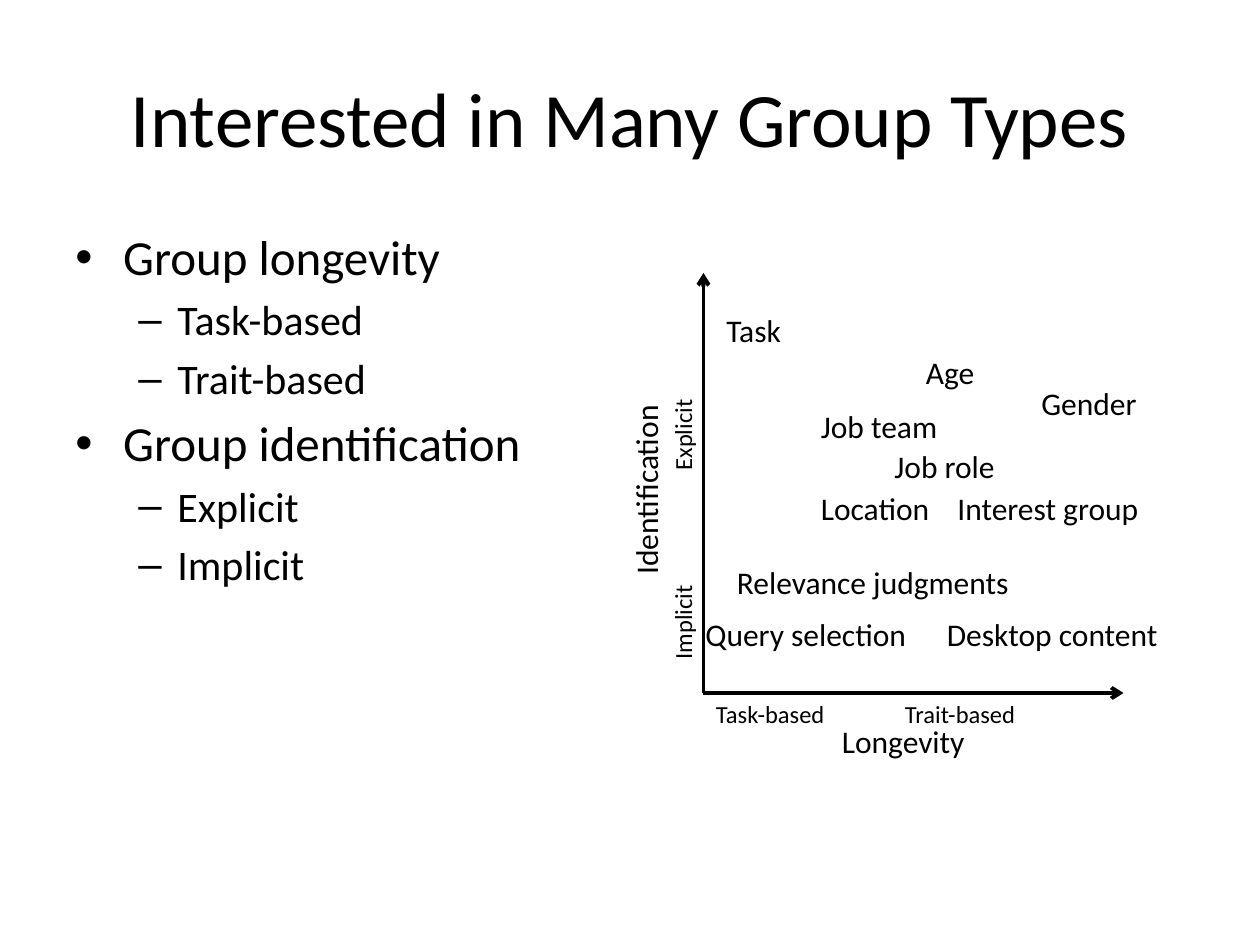
from lxml import etree
from pptx import Presentation
from pptx.dml.color import RGBColor
from pptx.enum import shapes, text
from pptx.oxml import ns
from pptx.util import Inches, Pt

COLUMNS, ROWS = 120, 90


def color(value):
    return RGBColor.from_string(value)


def add_text(para, words, size=18, font="Calibri", ink="000000", align=None):
    span = para.add_run()
    span.text = words
    span.font.size = Pt(size)
    span.font.name = font
    span.font.color.rgb = color(ink)
    para.alignment = align


class SlideBuilder:
    ink = "000000"
    line_width = 2.25
    # For each outline level: size, bullet, left margin and hanging indent in inches
    levels = [(28, "•", 0.38, 0.38), (24, "–", 0.81, 0.31)]

    def __init__(self, deck):
        self.column = deck.slide_width / COLUMNS
        self.row = deck.slide_height / ROWS
        self.page = deck.slides.add_slide(deck.slide_layouts[5])

    def place(self, left, top, width, height):
        return (round(left * self.column), round(top * self.row),
                round(width * self.column), round(height * self.row))

    def title(self, words, *area):
        box = self.page.shapes.title
        box.left, box.top, box.width, box.height = self.place(*area)
        frame = box.text_frame
        frame.vertical_anchor = text.MSO_ANCHOR.MIDDLE
        add_text(frame.paragraphs[0], words, size=44, ink=self.ink,
                 align=text.PP_ALIGN.CENTER)

    def label(self, words, left, top, width, size=18, rotation=0):
        height = 4.8 if size == 18 else 4
        box = self.page.shapes.add_textbox(*self.place(left, top, width, height))
        box.rotation = rotation
        frame = box.text_frame
        frame.word_wrap = True
        frame.auto_size = text.MSO_AUTO_SIZE.SHAPE_TO_FIT_TEXT
        add_text(frame.paragraphs[0], words, size=size, ink=self.ink)

    def outline(self, items, *area):
        frame = self.page.shapes.add_textbox(*self.place(*area)).text_frame
        frame.word_wrap = True
        for index, (level, words) in enumerate(items):
            para = frame.add_paragraph() if index else frame.paragraphs[0]
            size, bullet, margin, hanging = self.levels[level]
            para.level = level
            para.space_before = Pt(0.2 * size)
            add_text(para, words, size=size, ink=self.ink)
            properties = para._p.get_or_add_pPr()
            properties.set("marL", str(Inches(margin)))
            properties.set("indent", str(-Inches(hanging)))
            etree.SubElement(properties, ns.qn("a:buFont"), typeface="Arial")
            etree.SubElement(properties, ns.qn("a:buChar"), char=bullet)

    def arrow(self, left, top, end_left, end_top):
        line = self.page.shapes.add_connector(
            shapes.MSO_CONNECTOR.STRAIGHT, *self.place(left, top, end_left, end_top))
        line.line.color.rgb = color(self.ink)
        line.line.width = Pt(self.line_width)
        etree.SubElement(line.line._get_or_add_ln(), ns.qn("a:tailEnd"), type="arrow")
        etree.SubElement(line._element.spPr, ns.qn("a:effectLst"))


def main():
    deck = Presentation()
    deck.slide_width, deck.slide_height = Inches(10), Inches(7.5)
    slide = SlideBuilder(deck)

    # Title and outline
    slide.title("Interested in Many Group Types", 6, 3.6, 108, 15)
    slide.outline([
        (0, "Group longevity"), (1, "Task-based"), (1, "Trait-based"),
        (0, "Group identification"), (1, "Explicit"), (1, "Implicit"),
    ], 6, 21, 53, 59.4)

    # Axes with their names and ends
    origin, axis_length = (67, 66), 40
    slide.arrow(*origin, origin[0] + axis_length, origin[1])
    slide.label("Task-based\t\tTrait-based", 67, 66, 38, size=14)
    slide.label("Longevity", 79, 68.2, 19)
    slide.arrow(*origin, origin[0], origin[1] - axis_length)
    slide.label("Identification", 52, 44, 19, rotation=270)
    slide.label("Implicit\t\tExplicit", 48, 45, 34, size=14, rotation=270)

    # Group types: left, top and width on the grid
    for words, *area in [
        ("Task", 68, 29, 11),
        ("Age", 87, 33, 8),
        ("Gender", 98, 36, 12),
        ("Job team", 77, 38.2, 18),
        ("Job role", 84, 42, 16),
        ("Location", 77, 46, 17),
        ("Interest group", 90, 46, 20),
        ("Relevance judgments", 69, 53, 33),
        ("Query selection", 66, 58, 23),
        ("Desktop content", 89, 58, 26),
    ]:
        slide.label(words, *area)

    deck.save("out.pptx")


if __name__ == "__main__":
    main()
